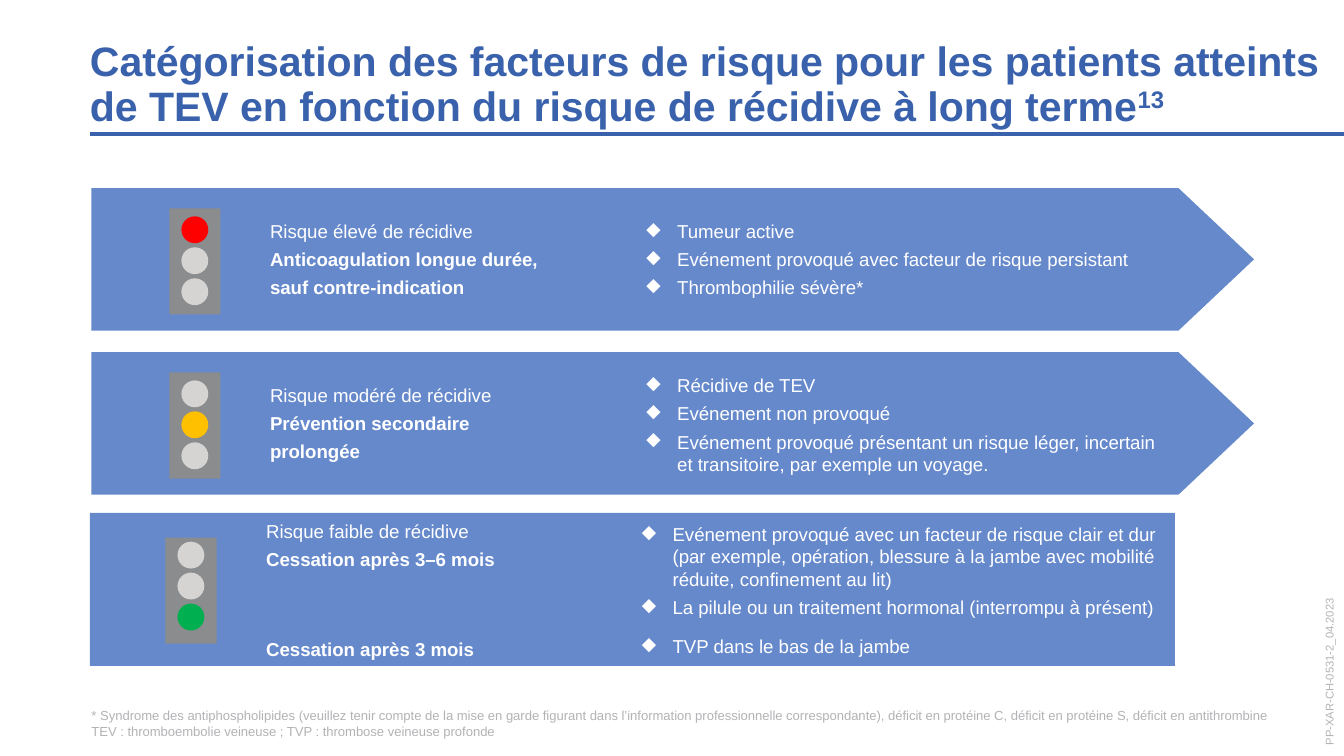
"""Build the slide on recurrence risk categories after venous thromboembolism."""
from lxml import etree
from pptx import Presentation
from pptx.dml.color import RGBColor
from pptx.enum import shapes, text
from pptx.oxml.ns import qn
from pptx.util import Pt

BLUE, BAND, WHITE, PALE = "3961AC", "6689CC", "FFFFFF", "B3B2B5"
HOUSING, LAMP_OFF = "8A8C8E", "D5D4D2"

TITLE = ("Catégorisation des facteurs de risque pour les patients atteints "
         "de TEV en fonction du risque de récidive à long terme")
REFERENCE = "13"
FOOTNOTE = ("* Syndrome des antiphospholipides (veuillez tenir compte de la mise en garde "
            "figurant dans l’information professionnelle correspondante), déficit en "
            "protéine C, déficit en protéine S, déficit en antithrombine\v"
            "TEV : thromboembolie veineuse ; TVP : thrombose veineuse profonde")
CODE = "PP-XAR-CH-0531-2_04.2023"

RISKS = [
    {"band": (49, 100.8, 622.8, 76.3), "arrow": True, "lit": 0, "lamp": "FF0000",
     "light": (90.7, 111.6), "lamp_top": 4.3, "advice_left": 144.7,
     "factors_box": (346.3, 100.8, 271, 75.6),
     "advice": ["Risque élevé de récidive", "Anticoagulation longue durée,",
                "sauf contre-indication"], "advice_gaps": [3, 3, 3],
     "factors": ["Tumeur active", "Evénement provoqué avec facteur de risque persistant",
                 "Thrombophilie sévère*"], "factor_gaps": [3, 3, 3]},
    {"band": (49, 188.7, 622.8, 76.3), "arrow": True, "lit": 1, "lamp": "FFC000",
     "light": (90.7, 199.5), "lamp_top": 4.3, "advice_left": 144.7,
     "factors_box": (346.3, 189.4, 283, 76.3),
     "advice": ["Risque modéré de récidive", "Prévention secondaire", "prolongée"],
     "advice_gaps": [3, 3, 3],
     "factors": ["Récidive de TEV", "Evénement non provoqué",
                 "Evénement provoqué présentant un risque léger, incertain et transitoire, "
                 "par exemple un voyage."], "factor_gaps": [3, 3, 3]},
    {"band": (48.2, 274.8, 581.2, 82), "arrow": False, "lit": 2, "lamp": "00B050",
     "light": (88.6, 288), "lamp_top": 2.2, "advice_left": 142.6,
     "factors_box": (343.8, 275.8, 282.2, 80.6),
     "advice": ["Risque faible de récidive", "Cessation après 3–6 mois",
                "Cessation après 3 mois"], "advice_gaps": [3, 36, 36],
     "factors": ["Evénement provoqué avec un facteur de risque clair et dur (par exemple, "
                 "opération, blessure à la jambe avec mobilité réduite, confinement au lit)",
                 "La pilule ou un traitement hormonal (interrompu à présent)",
                 "TVP dans le bas de la jambe"], "factor_gaps": [3, 9, 3]},
]


def rgb(value):
    return RGBColor.from_string(value)


def place(item, left, top, width, height):
    item.left, item.top, item.width, item.height = map(Pt, (left, top, width, height))


def write(frame, lines, size=10, color=WHITE, bold=(), gaps=(), bullet=None, pad=0,
          anchor=text.MSO_ANCHOR.MIDDLE, spacing=None):
    frame.word_wrap = True
    frame.auto_size = text.MSO_AUTO_SIZE.NONE
    frame.vertical_anchor = anchor
    frame.margin_left = frame.margin_right = 0
    frame.margin_top = frame.margin_bottom = Pt(pad)
    for index, line in enumerate(lines):
        paragraph = frame.paragraphs[0] if index == 0 else frame.add_paragraph()
        paragraph.text = line
        paragraph.alignment = text.PP_ALIGN.LEFT
        paragraph.line_spacing = spacing
        paragraph.space_after = Pt(gaps[index]) if gaps else None
        for run in paragraph.runs:
            font = run.font
            font.name, font.size, font.bold = "Arial", Pt(size), index in bold
            font.color.rgb = rgb(color)
        if bullet:
            props = paragraph._p.get_or_add_pPr()
            props.set("marL", str(Pt(16.5)))
            props.set("indent", str(-Pt(16.5)))
            tint = etree.SubElement(props, qn("a:buClr"))
            etree.SubElement(tint, qn("a:srgbClr"), val=color)
            etree.SubElement(props, qn("a:buChar"), char=bullet)


def add_text(slide, box, lines, **style):
    textbox = slide.shapes.add_textbox(*map(Pt, box))
    write(textbox.text_frame, lines, **style)
    return textbox


def add_block(slide, kind, box, fill):
    block = slide.shapes.add_shape(kind, *map(Pt, box))
    block.shadow.inherit = False
    block.fill.solid()
    block.fill.fore_color.rgb = rgb(fill)
    block.line.fill.background()
    return block


def add_title(slide):
    title = slide.shapes.title
    place(title, 48.2, 21.6, 664, 48.2)
    write(title.text_frame, [TITLE], size=22, color=BLUE, bold=[0],
          anchor=text.MSO_ANCHOR.BOTTOM, spacing=0.9)
    reference = title.text_frame.paragraphs[0].add_run()
    reference.text = REFERENCE
    font = reference.font
    font.name, font.size, font.bold = "Arial", Pt(22), True
    font.color.rgb = rgb(BLUE)
    reference._r.get_or_add_rPr().set("baseline", "30000")
    rule = slide.shapes.add_connector(shapes.MSO_CONNECTOR.STRAIGHT,
                                      Pt(48.2), Pt(72), Pt(720), Pt(72))
    rule.line.color.rgb = rgb(BLUE)
    rule.line.width = Pt(2.25)
    etree.SubElement(rule._element.spPr, qn("a:effectLst"))


def add_risk(slide, risk):
    kinds = shapes.MSO_SHAPE
    _, top, _, height = risk["band"]
    band = add_block(slide, kinds.PENTAGON if risk["arrow"] else kinds.RECTANGLE,
                     risk["band"], BAND)
    if risk["arrow"]:
        band.adjustments[0] = 0.53
    left, light_top = risk["light"]
    add_block(slide, kinds.RECTANGLE, (left, light_top, 27.4, 56.9), HOUSING)
    for lamp in range(3):
        add_block(slide, kinds.OVAL,
                  (left + 6.5, light_top + risk["lamp_top"] + lamp * 16.6, 14.4, 14.4),
                  risk["lamp"] if lamp == risk["lit"] else LAMP_OFF)
    advice_top = top if risk["arrow"] else risk["factors_box"][1]
    advice_height = height if risk["arrow"] else risk["factors_box"][3]
    add_text(slide, (risk["advice_left"], advice_top, 201.6, advice_height),
             risk["advice"], bold=[1, 2], gaps=risk["advice_gaps"], pad=3.6)
    add_text(slide, risk["factors_box"], risk["factors"],
             gaps=risk["factor_gaps"], bullet="◆", pad=3.6)


def main():
    deck = Presentation()
    deck.slide_width, deck.slide_height = Pt(720), Pt(405)
    slide = deck.slides.add_slide(deck.slide_layouts[5])
    add_title(slide)
    for risk in RISKS:
        add_risk(slide, risk)
    add_text(slide, (49, 378.7, 639.4, 17.3), [FOOTNOTE], size=7, color=PALE,
             anchor=text.MSO_ANCHOR.BOTTOM)
    code = add_text(slide, (661.7, 337.7, 100.8, 22.3), [CODE], size=6, color=PALE)
    code.rotation = 270
    deck.save("out.pptx")


if __name__ == "__main__":
    main()
